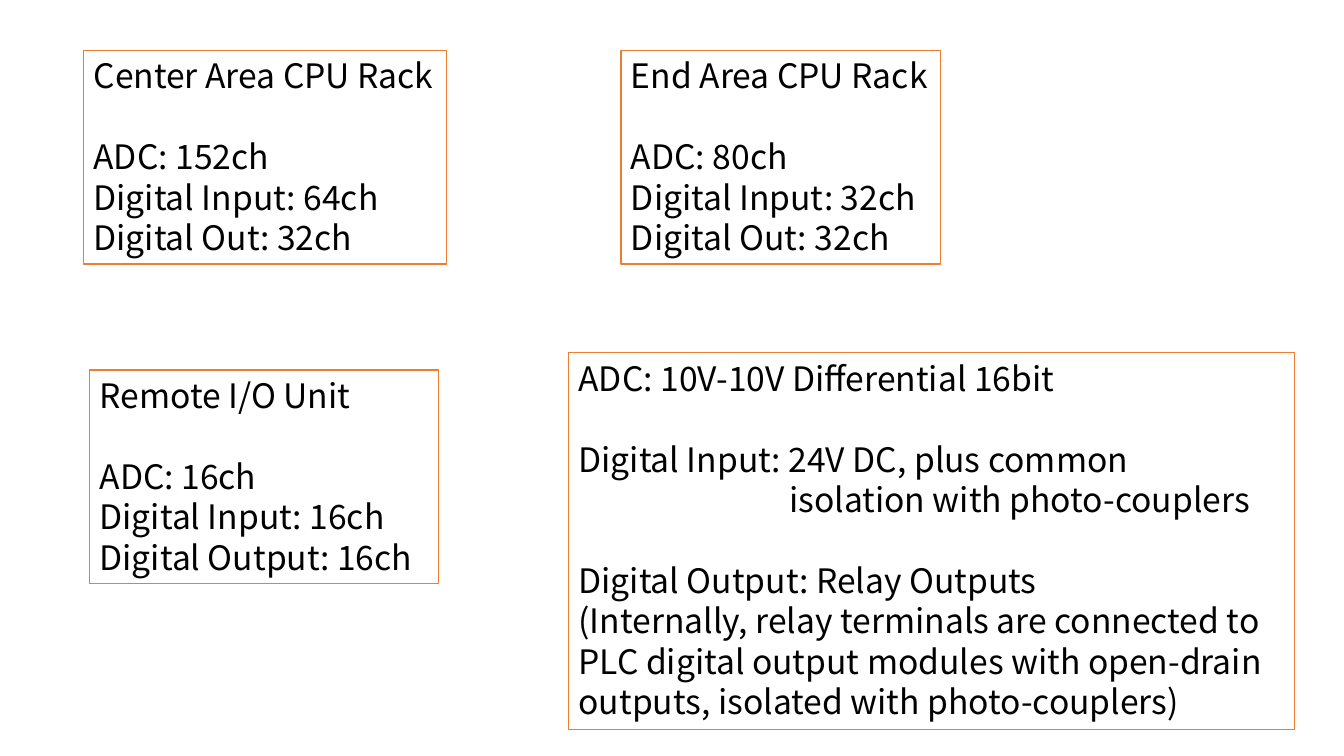
from pptx import Presentation
from pptx import util as u
from pptx.dml.color import RGBColor
from pptx.enum import text

COLORS = {"border": "ED7D31", "text": "000000"}
FONT = "Noto Sans CJK JP"
SIZE = u.Pt(24)
LINE = u.Pt(29)  # height of one text line, also the gap between groups
HANG = u.Inches(2.09)  # start of the continuation after "Digital Input:"

prs = Presentation()
prs.slide_width, prs.slide_height = u.Inches(13.33), u.Inches(7.5)
slide = prs.slides.add_slide(prs.slide_layouts[6])

# Panels: left, top, width, height, wrap, groups of lines
panels = [
    (6.16, 0.5, 3.17, 2.12, False, [
        ["End Area CPU Rack"],
        ["ADC: 80ch", "Digital Input: 32ch", "Digital Out: 32ch"],
    ]),
    (0.83, 0.5, 3.6, 2.12, False, [
        ["Center Area CPU Rack"],
        ["ADC: 152ch", "Digital Input: 64ch", "Digital Out: 32ch"],
    ]),
    (0.89, 3.67, 3.46, 2.12, True, [
        ["Remote I/O Unit"],
        ["ADC: 16ch", "Digital Input: 16ch", "Digital Output: 16ch"],
    ]),
    (5.64, 3.5, 7.2, 3.74, True, [
        ["ADC: 10V-10V Differential 16bit"],
        ["Digital Input: 24V DC, plus common\visolation with photo-couplers"],
        ["Digital Output: Relay Outputs",
         "(Internally, relay terminals are connected to",
         "PLC digital output modules with open-drain",
         "outputs, isolated with photo-couplers)"],
    ]),
]

for left, top, width, height, wrap, groups in panels:
    # Bordered panel
    panel = slide.shapes.add_textbox(*map(u.Inches, (left, top, width, height)))
    panel.line.color.rgb = RGBColor.from_string(COLORS["border"])
    panel.line.width = u.Pt(1)
    frame = panel.text_frame
    frame.word_wrap = wrap
    frame.auto_size = text.MSO_AUTO_SIZE.SHAPE_TO_FIT_TEXT
    frame.text = "\n".join(line for group in groups for line in group)

    # One blank line's worth of space before each later group
    first = 0
    for group in groups:
        if first:
            frame.paragraphs[first].space_before = LINE
        first += len(group)

    # Text style, with a hanging indent where a line continues
    for paragraph in frame.paragraphs:
        if "\v" in paragraph.text:
            properties = paragraph._p.get_or_add_pPr()
            properties.set("marL", str(HANG))
            properties.set("indent", str(-HANG))
        paragraph.font.size = SIZE
        for run in paragraph.runs:
            run.font.name = FONT
            run.font.size = SIZE
            run.font.color.rgb = RGBColor.from_string(COLORS["text"])

prs.save("out.pptx")
